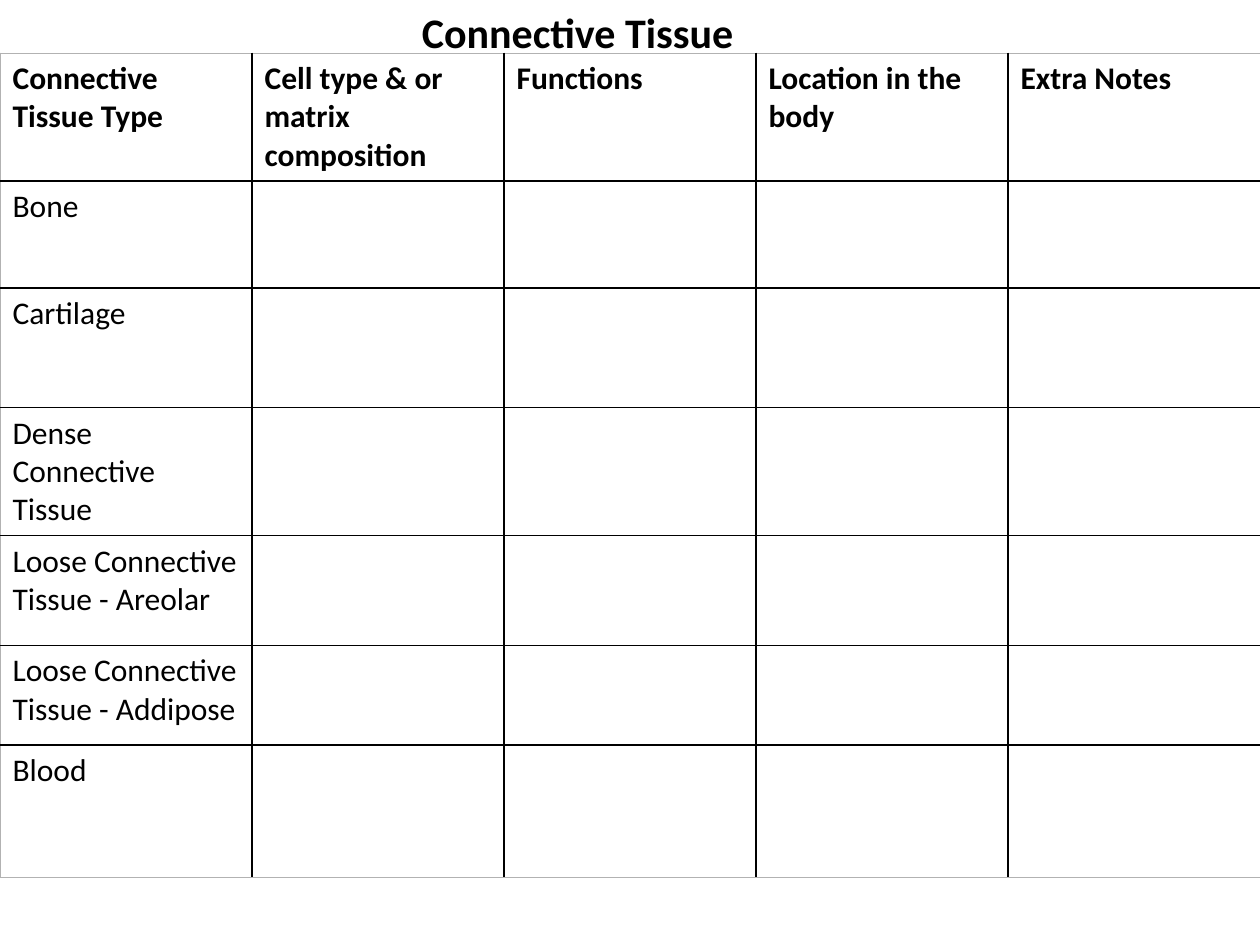
from dataclasses import dataclass

from lxml import etree
from pptx import Presentation
from pptx import util as u
from pptx.dml import color
from pptx.enum import text
from pptx.oxml import ns

BLACK, GREY = "000000", "B2B2B2"


@dataclass
class Row:
    high: float
    cells: tuple[str, ...]
    bold: bool = False


ROWS = [
    Row(0.96, ("Connective\nTissue Type", "Cell type & or matrix composition",
               "Functions", "Location in the body", "Extra Notes"), True),
    Row(0.85, ("Bone",)),
    Row(0.95, ("Cartilage",)),
    Row(0.95, ("Dense Connective Tissue",)),
    Row(0.87, ("Loose Connective Tissue - Areolar",)),
    Row(0.79, ("Loose Connective Tissue - Addipose",)),
    Row(1.05, ("Blood",)),
]
COLS = len(ROWS[0].cells)


def paint(fmt, tone: str) -> None:
    fmt.rgb = color.RGBColor.from_string(tone)


def write(frame, words: str, size: int, bold: bool) -> None:
    frame.text = words
    look = {"name": "Calibri", "size": u.Pt(size), "bold": bold}
    for para in frame.paragraphs:
        for key, value in look.items():
            setattr(para.font, key, value)
        paint(para.font.color, BLACK)


def edge(cell, side: str, outer: bool) -> None:
    width = u.Pt(0.5 if outer else 1)
    line = etree.SubElement(cell._tc.get_or_add_tcPr(),
                            ns.qn(f"a:ln{side}"), w=str(width))
    fill = etree.SubElement(line, ns.qn("a:solidFill"))
    etree.SubElement(fill, ns.qn("a:srgbClr"), val=GREY if outer else BLACK)


def draw_grid(slide) -> None:
    high = sum(row.high for row in ROWS)
    grid = slide.shapes.add_table(len(ROWS), COLS, u.Inches(0), u.Inches(0.42),
                                  u.Inches(10), u.Inches(high)).table
    grid.first_row = grid.horz_banding = False
    for r, row in enumerate(ROWS):
        grid.rows[r].height = u.Inches(row.high)
        for c in range(COLS):
            cell = grid.cell(r, c)
            words = row.cells[c] if c < len(row.cells) else ""
            write(cell.text_frame, words, 18, row.bold)
            # Grey frame outside, black rules inside
            outer = {"L": c == 0, "R": c == COLS - 1,
                     "T": r == 0, "B": r == len(ROWS) - 1}
            for side, flag in outer.items():
                edge(cell, side, flag)
            cell.fill.background()


def draw_title(slide) -> None:
    box = slide.shapes.add_textbox(u.Inches(3.25), u.Inches(0),
                                   u.Inches(5), u.Inches(0.51))
    frame = box.text_frame
    frame.word_wrap = True
    frame.auto_size = text.MSO_AUTO_SIZE.SHAPE_TO_FIT_TEXT
    write(frame, "Connective Tissue", 24, True)


def main() -> None:
    deck = Presentation()
    deck.slide_width, deck.slide_height = u.Inches(10), u.Inches(7.5)
    slide = deck.slides.add_slide(deck.slide_layouts[6])
    # Worksheet table, then its heading
    draw_grid(slide)
    draw_title(slide)
    deck.save("out.pptx")


if __name__ == "__main__":
    main()
